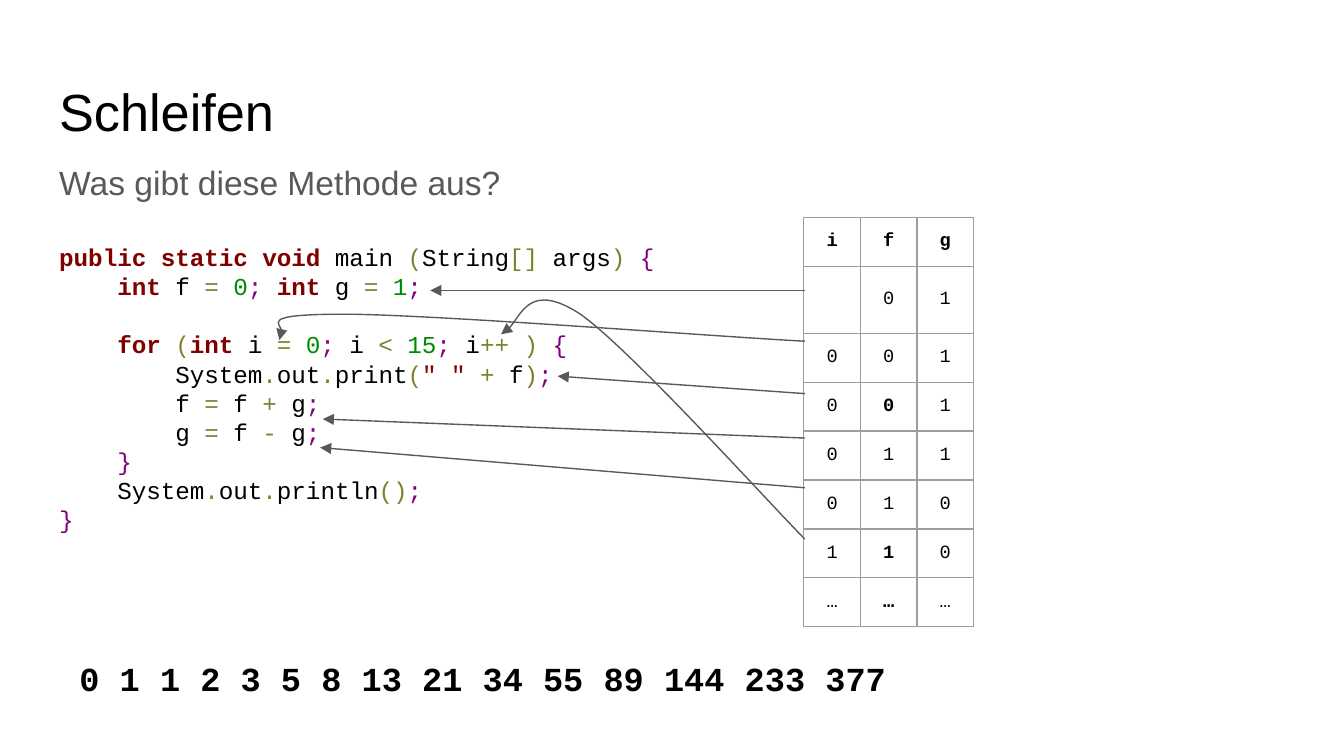
from itertools import groupby

from lxml.etree import SubElement
from pptx import Presentation
from pptx.dml.color import RGBColor
from pptx.enum.shapes import MSO_CONNECTOR as Link
from pptx.enum.text import MSO_ANCHOR as Anchor, PP_ALIGN as Align
from pptx.oxml.ns import qn
from pptx.util import Cm, Pt

BLACK, GREY, BORDER = "000000", "595959", "9E9E9E"
MAROON, OLIVE, PURPLE, GREEN = "800000", "808030", "800080", "008C00"
KEYWORDS = {"public", "static", "void", "int", "for"}
SYMBOLS = {**dict.fromkeys("()[]=+-<.", OLIVE), **dict.fromkeys(";{}", PURPLE), '"': MAROON}

CODE = """public static void main (String[] args) {
    int f = 0; int g = 1;

    for (int i = 0; i < 15; i++ ) {
        System.out.print(" " + f);
        f = f + g;
        g = f - g;
    }
    System.out.println();
}"""

# "*" marks a bold value, "-" an empty cell
TRACE = ["*i *f *g", "- 0 1", "0 0 1", "0 *0 1", "0 1 1", "0 1 0", "1 *1 0", "… *… …"]


def colour(value):
    return RGBColor.from_string(value)


def tokens(line):
    """Split a line of code into (text, colour, bold)."""
    for kind, chars in groupby(line, lambda c: "word" if c.isalnum() else SYMBOLS.get(c, BLACK)):
        text = "".join(chars)
        if kind != "word":
            yield text, kind, False
        elif text in KEYWORDS:
            yield text, MAROON, True
        else:
            yield text, GREEN if text.isdigit() else BLACK, False


class LessonSlide:
    sans, mono = "Arial", "Courier New"
    code_size = 13
    inset = Cm(0.25)
    line_width = Pt(0.75)

    def __init__(self, deck):
        self.slide = deck.slides.add_slide(deck.slide_layouts[6])
        self.shapes = self.slide.shapes

    def pad(self, holder):
        for side in ("left", "top", "right", "bottom"):
            setattr(holder, f"margin_{side}", self.inset)

    def run(self, paragraph, text, ink=BLACK, **style):
        run = paragraph.add_run()
        run.text = text
        for name, value in style.items():
            setattr(run.font, name, value)
        run.font.color.rgb = colour(ink)

    def box(self, place):
        frame = self.shapes.add_textbox(*map(Cm, place)).text_frame
        frame.word_wrap = True
        self.pad(frame)
        return frame.paragraphs[0]

    def text(self, place, text, ink=BLACK, **style):
        self.run(self.box(place), text, ink, **style)

    def line_break(self, paragraph):
        """Break the line at code size, so that an empty line keeps the pitch."""
        paragraph.add_line_break()
        props = SubElement(paragraph._p[-1], qn("a:rPr"), sz=str(self.code_size * 100))
        SubElement(props, qn("a:latin"), typeface=self.mono)

    def code(self, place, source):
        paragraph = self.box(place)
        for number, line in enumerate(source.split("\n")):
            if number:
                self.line_break(paragraph)
            for text, ink, bold in tokens(line):
                self.run(paragraph, text, ink, name=self.mono, size=Pt(self.code_size), bold=bold)

    def table(self, left, top, column, height, rows):
        cells = [row.split() for row in rows]
        count = len(cells[0])
        table = self.shapes.add_table(len(rows), count, Cm(left), Cm(top),
                                      Cm(column * count), Cm(height * len(rows))).table
        table.first_row = table.horz_banding = False
        for r, values in enumerate(cells):
            for c, value in enumerate(values):
                self.cell(table.cell(r, c), value)

    def cell(self, cell, value):
        self.pad(cell)
        cell.vertical_anchor = Anchor.MIDDLE
        props = cell._tc.get_or_add_tcPr()
        for side in ("lnL", "lnR", "lnT", "lnB"):
            edge = SubElement(props, qn(f"a:{side}"), w=str(self.line_width))
            SubElement(SubElement(edge, qn("a:solidFill")), qn("a:srgbClr"), val=BORDER)
        cell.fill.background()
        paragraph = cell.text_frame.paragraphs[0]
        paragraph.alignment = Align.CENTER
        if value != "-":
            self.run(paragraph, value.lstrip("*"), name=self.mono, size=Pt(10),
                     bold=value.startswith("*"))

    def arrowhead(self, shape):
        shape.line.color.rgb = colour(GREY)
        shape.line.width = self.line_width
        SubElement(shape.line._get_or_add_ln(), qn("a:tailEnd"), type="triangle")

    def arrow(self, start, end):
        arrow = self.shapes.add_connector(Link.STRAIGHT, *map(Cm, start + end))
        self.arrowhead(arrow)
        SubElement(arrow._element.spPr, qn("a:effectLst"))

    def curve(self, start, *points):
        """Draw an arrow along cubic curves, three points for each."""
        builder = self.shapes.build_freeform(*map(Cm, start))
        builder.add_line_segments([tuple(map(Cm, point)) for point in points], close=False)
        curve = builder.convert_to_shape()
        curve.fill.background()
        self.arrowhead(curve)
        curve.shadow.inherit = False
        outline = curve._element.xpath(".//a:path")[0]
        segments = outline.findall(qn("a:lnTo"))
        for first in range(0, len(segments), 3):
            bend = SubElement(outline, qn("a:cubicBezTo"))
            for segment in segments[first:first + 3]:
                bend.append(segment[0])
                outline.remove(segment)


def main():
    deck = Presentation()
    deck.slide_width, deck.slide_height = Cm(25.4), Cm(14.29)
    lesson = LessonSlide(deck)

    # Heading, method and question
    lesson.text((0.87, 1.24, 23.67, 1.6), "Schleifen", name=lesson.sans, size=Pt(28))
    lesson.code((0.87, 4.33, 11.99, 5.94), CODE)
    lesson.text((0.87, 2.82, 23.67, 1.09), "Was gibt diese Methode aus?", GREY,
                name=lesson.sans, size=Pt(18))

    # Trace of the variables; rows grow to fit their text
    lesson.table(15.19, 4.11, 1.07, 0.71, TRACE)

    # Arrows from trace rows to statements
    edge = 15.21
    for row_y, end in [(5.49, (8.13, 5.49)), (7.44, (10.54, 7.11)),
                       (8.28, (6.1, 7.92)), (9.22, (6.05, 8.46))]:
        lesson.arrow((edge, row_y), end)
    lesson.curve((edge, 6.45), (13.77, 6.38), (8.15, 5.94), (6.5, 5.94),
                 (4.85, 5.94), (5.49, 6.35), (5.28, 6.43))
    lesson.curve((edge, 10.19), (14.5, 9.47), (11.91, 6.6), (10.97, 5.94),
                 (10.01, 5.31), (9.73, 6.25), (9.47, 6.32))

    # Printed result
    lesson.text((0.87, 12.19, 16.71, 1.32), " 0 1 1 2 3 5 8 13 21 34 55 89 144 233 377",
                name=lesson.mono, size=Pt(18), bold=True)

    deck.save("out.pptx")


if __name__ == "__main__":
    main()
